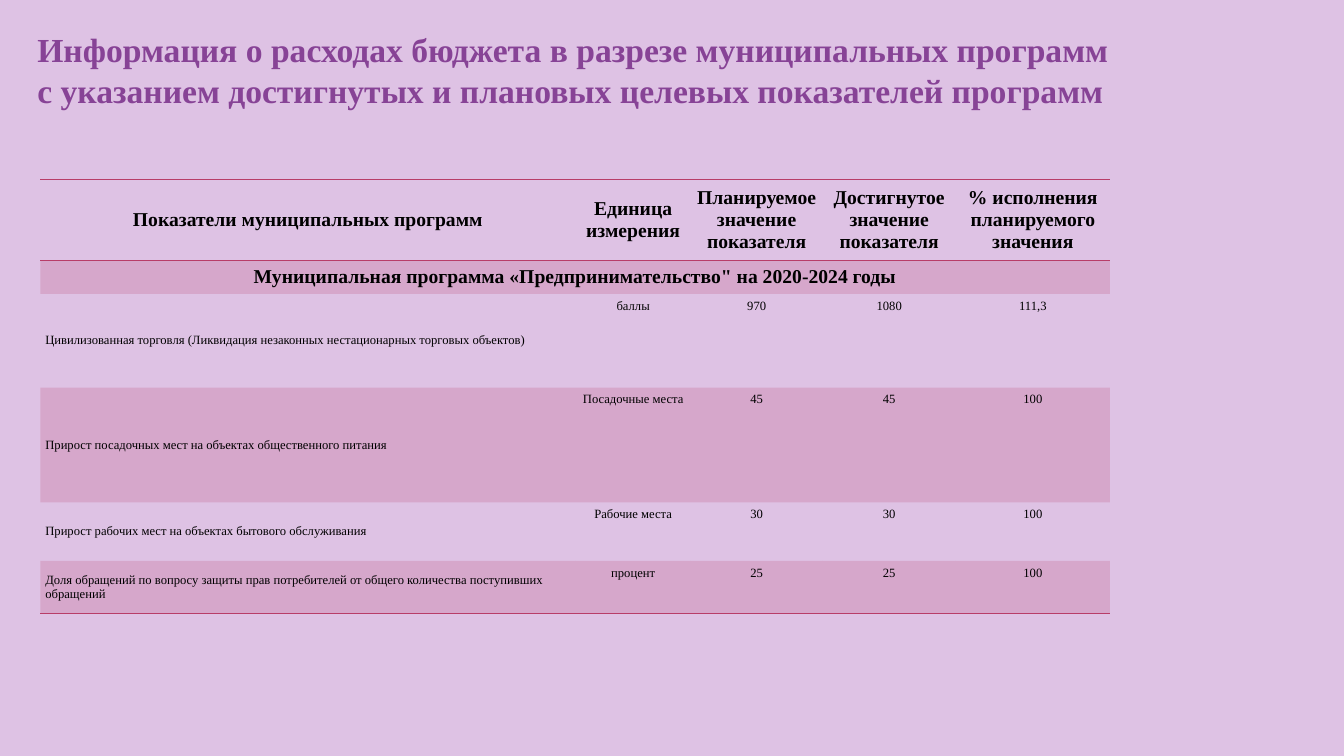
from dataclasses import dataclass

from lxml.etree import SubElement
from pptx import Presentation
from pptx.dml.color import RGBColor as RGB
from pptx.enum.text import MSO_ANCHOR as ANCHOR, MSO_AUTO_SIZE as AUTOSIZE, PP_ALIGN as ALIGN
from pptx.oxml import parse_xml
from pptx.oxml.ns import nsdecls, qn
from pptx.table import _Cell as Cell
from pptx.util import Inches, Pt

COLORS = {"background": "DEC2E4", "title": "874396", "text": "000000", "accent": "B83D68"}
FONT = "Times New Roman"
NO_STYLE = "{2D5ABB26-0587-4C30-8999-92F81FD0307C}"
BAND_ALPHA = 20
COLUMN_WIDTHS = (5.31, 1.14, 1.31, 1.32, 1.53)
TITLE = ("Информация о расходах бюджета в разрезе муниципальных программ \v"
         "с указанием достигнутых и плановых целевых показателей программ")


@dataclass
class Row:
    height: float
    texts: tuple[str, ...]
    heading: bool = False
    banded: bool = False
    borders: tuple[str, ...] = ()


ROWS = (
    Row(0.73, ("Показатели муниципальных программ", "Единица измерения",
               "Планируемое значение показателя", "Достигнутое значение показателя",
               "% исполнения планируемого значения"), heading=True, borders=("lnT", "lnB")),
    Row(0.31, ("Муниципальная программа «Предпринимательство\" на 2020-2024 годы",),
        heading=True, banded=True),
    Row(0.93, ("Цивилизованная торговля (Ликвидация незаконных нестационарных торговых объектов)",
               "баллы", "970", "1080", "111,3")),
    Row(1.14, ("Прирост посадочных мест на объектах общественного питания",
               "Посадочные места", "45", "45", "100"), banded=True),
    Row(0.58, ("Прирост рабочих мест на объектах бытового обслуживания",
               "Рабочие места", "30", "30", "100")),
    Row(0.52, ("Доля обращений по вопросу защиты прав потребителей от общего количества "
               "поступивших обращений", "процент", "25", "25", "100"),
        banded=True, borders=("lnB",)),
)


def set_all(target: object, values: dict) -> None:
    for name, value in values.items():
        setattr(target, name, value)


def format_font(font: object, size: float, bold: bool, color: str) -> None:
    set_all(font, {"name": FONT, "size": Pt(size), "bold": bold})
    font.color.rgb = RGB.from_string(COLORS[color])


def paint_cell(cell: Cell, row: Row) -> None:
    """Apply the translucent band and the horizontal rules of a row."""
    tc_pr = cell._tc.get_or_add_tcPr()
    if row.banded:
        cell.fill.solid()
        cell.fill.fore_color.rgb = RGB.from_string(COLORS["accent"])
        color = tc_pr.find(".//" + qn("a:srgbClr"))
        SubElement(color, qn("a:alpha")).set("val", str(BAND_ALPHA * 1000))
    else:
        cell.fill.background()
    for i, side in enumerate(row.borders):
        tc_pr.insert(i, parse_xml(
            f'<a:{side} {nsdecls("a")} w="{Pt(1)}"><a:solidFill>'
            f'<a:srgbClr val="{COLORS["accent"]}"/></a:solidFill></a:{side}>'))


def write_cell(cell: Cell, text: str, row: Row, is_label: bool) -> None:
    margin = Inches(0.05)
    set_all(cell, {
        "text": text,
        "vertical_anchor": ANCHOR.MIDDLE if row.heading or is_label else ANCHOR.TOP,
        "margin_left": margin, "margin_right": margin,
        "margin_top": margin, "margin_bottom": margin,
    })
    p = cell.text_frame.paragraphs[0]
    p.alignment = ALIGN.LEFT if is_label and not row.heading else ALIGN.CENTER
    format_font(p.runs[0].font, 14 if row.heading else 9, row.heading, "text")


def add_title(slide: object) -> None:
    sp = slide.shapes.title
    set_all(sp, {"left": Inches(0.27), "top": Inches(0.24),
                 "width": Inches(11.14), "height": Inches(0.91)})
    tf = sp.text_frame
    set_all(tf, {"text": TITLE, "word_wrap": True, "vertical_anchor": ANCHOR.TOP,
                 "auto_size": AUTOSIZE.SHAPE_TO_FIT_TEXT})
    p = tf.paragraphs[0]
    p.alignment = ALIGN.LEFT
    for r in p.runs:
        format_font(r.font, 24, True, "title")


def add_indicators(slide: object) -> None:
    frame = slide.shapes.add_table(
        len(ROWS), len(COLUMN_WIDTHS), Inches(0.4), Inches(1.78),
        Inches(sum(COLUMN_WIDTHS)), Inches(sum(row.height for row in ROWS)))
    table = frame.table
    set_all(table, {"first_row": False, "horz_banding": False})
    table._tbl.tblPr.find(qn("a:tableStyleId")).text = NO_STYLE
    for column, width in zip(table.columns, COLUMN_WIDTHS):
        column.width = Inches(width)
    for i, row in enumerate(ROWS):
        table.rows[i].height = Inches(row.height)
        if len(row.texts) == 1:
            table.cell(i, 0).merge(table.cell(i, len(COLUMN_WIDTHS) - 1))
        for j, text in enumerate(row.texts):
            cell = table.cell(i, j)
            write_cell(cell, text, row, j == 0)
            paint_cell(cell, row)


def main() -> None:
    prs = Presentation()
    set_all(prs, {"slide_width": Inches(13.33), "slide_height": Inches(7.5)})
    slide = prs.slides.add_slide(prs.slide_layouts[5])
    fill = slide.background.fill
    fill.solid()
    fill.fore_color.rgb = RGB.from_string(COLORS["background"])
    add_title(slide)
    add_indicators(slide)
    prs.save("out.pptx")


if __name__ == "__main__":
    main()
